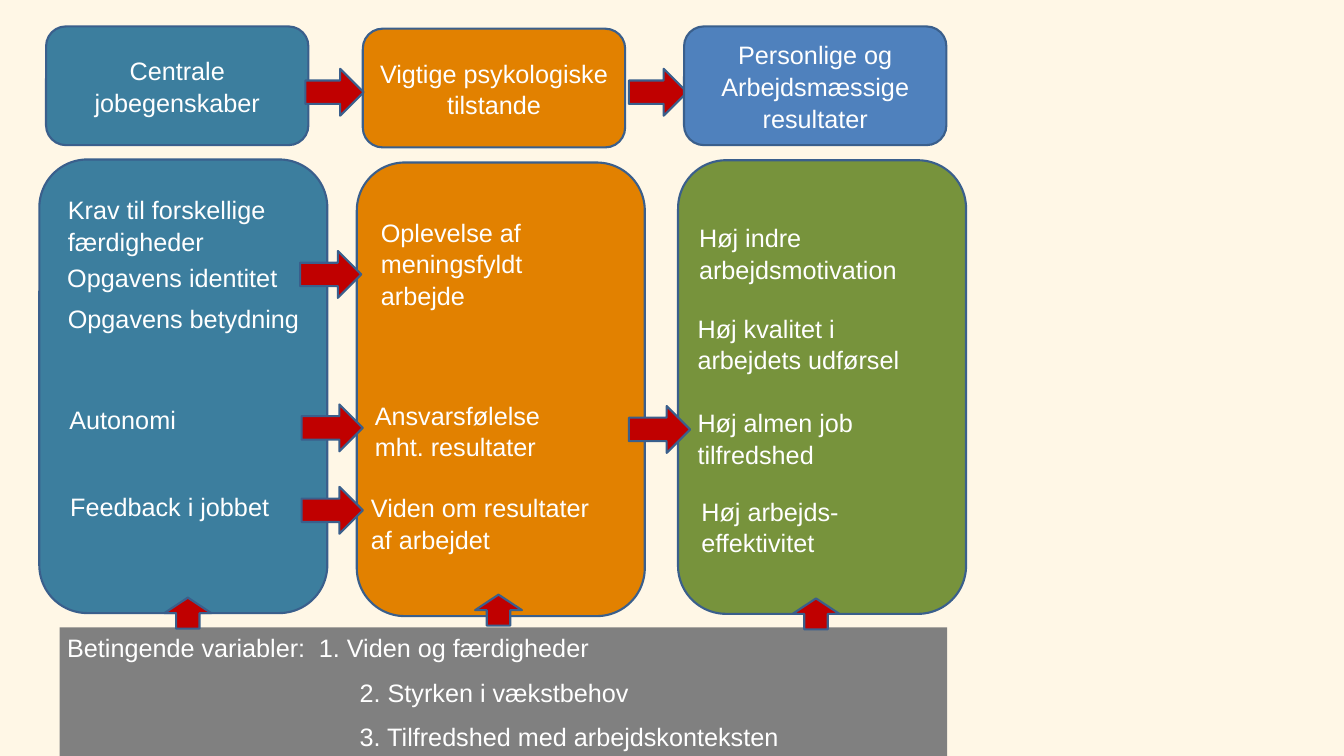
import dataclasses
import lxml.etree
import pptx
import pptx.dml.color
import pptx.enum.shapes
import pptx.enum.text
import pptx.oxml.ns
import pptx.util

Inches = pptx.util.Inches
Pt = pptx.util.Pt
Shape = pptx.enum.shapes.MSO_SHAPE
Align = pptx.enum.text.PP_ALIGN
Anchor = pptx.enum.text.MSO_ANCHOR


@dataclasses.dataclass
class Theme:
    cream: str = "FFF7E6"
    teal: str = "3C7E9E"
    orange: str = "E28100"
    green: str = "77933C"
    blue: str = "4F81BD"
    red: str = "C00000"
    gray: str = "808080"
    edge: str = "3A5F8C"
    white: str = "FFFFFF"
    font: str = "Arial"
    size: int = 24
    border: int = 2
    gap: int = 12
    leading: float = 1.05


theme = Theme()
color = pptx.dml.color.RGBColor.from_string


def write(shape, text, align=Align.LEFT, anchor=Anchor.TOP, indent=0, tab=None):
    frame = shape.text_frame
    frame.word_wrap = True
    frame.vertical_anchor = anchor
    for i, line in enumerate(text.split("\n")):
        para = frame.paragraphs[0] if i == 0 else frame.add_paragraph()
        para.text = line
        props = para._p.get_or_add_pPr()
        if i and indent:
            props.set("marL", str(Inches(indent)))
            para.space_before = Pt(theme.gap)
        if i == 0 and tab:
            tabs = lxml.etree.SubElement(props, pptx.oxml.ns.qn("a:tabLst"))
            lxml.etree.SubElement(tabs, pptx.oxml.ns.qn("a:tab"), pos=str(Inches(tab)), algn="l")
        para.alignment = align
        para.line_spacing = theme.leading
        for run in para.runs:
            run.font.name = theme.font
            run.font.size = Pt(theme.size)
            run.font.color.rgb = color(theme.white)


def draw(kind, left, top, width, height, fill, edge=theme.edge):
    shape = slide.shapes.add_shape(kind, Inches(left), Inches(top), Inches(width), Inches(height))
    shape.shadow.inherit = False
    shape.fill.solid()
    shape.fill.fore_color.rgb = color(fill)
    if edge:
        shape.line.color.rgb = color(edge)
        shape.line.width = Pt(theme.border)
    else:
        shape.line.fill.background()
    return shape


deck = pptx.Presentation()
deck.slide_width = Inches(17.78)
deck.slide_height = Inches(10)
slide = deck.slides.add_slide(deck.slide_layouts[6])
slide.background.fill.solid()
slide.background.fill.fore_color.rgb = color(theme.cream)

for left, top, fill in [(8.97, 2.12, theme.green), (4.72, 2.15, theme.orange), (0.52, 2.11, theme.teal)]:
    draw(Shape.ROUNDED_RECTANGLE, left, top, 3.81, 6, fill)

labels = [
    (0.8, 2.5, 3.05, 0.91, "Krav til forskellige færdigheder"),
    (0.79, 3.4, 3.05, 0.5, "Opgavens identitet"),
    (0.8, 3.94, 3.27, 0.5, "Opgavens betydning"),
    (0.82, 5.28, 3.05, 0.5, "Autonomi"),
    (0.83, 6.43, 3.05, 0.5, "Feedback i jobbet"),
    (4.94, 2.8, 3.05, 1.31, "Oplevelse af meningsfyldt arbejde"),
    (4.86, 5.22, 3.05, 0.91, "Ansvarsfølelse mht. resultater"),
    (4.81, 6.44, 3.3, 0.91, "Viden om resultater af arbejdet"),
    (9.15, 2.87, 3.52, 0.91, "Høj indre arbejdsmotivation"),
    (9.13, 4.07, 3.52, 0.91, "Høj kvalitet i \varbejdets udførsel"),
    (9.13, 5.32, 4.07, 0.91, "Høj almen job \vtilfredshed"),
    (9.18, 6.49, 3.52, 0.91, "Høj arbejds-\veffektivitet"),
]
for left, top, width, height, text in labels:
    box = slide.shapes.add_textbox(Inches(left), Inches(top), Inches(width), Inches(height))
    write(box, text)

base = draw(Shape.RECTANGLE, 0.79, 8.3, 11.74, 1.72, theme.gray, edge=None)
terms = "Betingende variabler:\t1. Viden og færdigheder\n2. Styrken i vækstbehov\n3. Tilfredshed med arbejdskonteksten"
write(base, terms, indent=3.87, tab=3.33)

for left, top in [(3.97, 3.32), (3.99, 5.35), (3.99, 6.44), (8.32, 5.37)]:
    draw(Shape.RIGHT_ARROW, left, top, 0.81, 0.62, theme.red)
draw(Shape.RIGHT_ARROW, 8.32, 0.91, 0.77, 0.62, theme.red)

heads = [
    (0.61, 0.35, theme.teal, "Centrale\njobegenskaber"),
    (4.8, 0.38, theme.orange, "Vigtige psykologiske\ntilstande"),
    (9.05, 0.35, theme.blue, "Personlige og\nArbejdsmæssige resultater"),
]
for left, top, fill, text in heads:
    head = draw(Shape.ROUNDED_RECTANGLE, left, top, 3.47, 1.57, fill)
    write(head, text, align=Align.CENTER, anchor=Anchor.MIDDLE)
draw(Shape.RIGHT_ARROW, 4.04, 0.91, 0.77, 0.62, theme.red)

for left, top in [(10.59, 7.81), (6.39, 7.76), (2.28, 7.8)]:
    arrow = draw(Shape.RIGHT_ARROW, left, top, 0.41, 0.62, theme.red)
    arrow.rotation = 270

deck.save("out.pptx")
